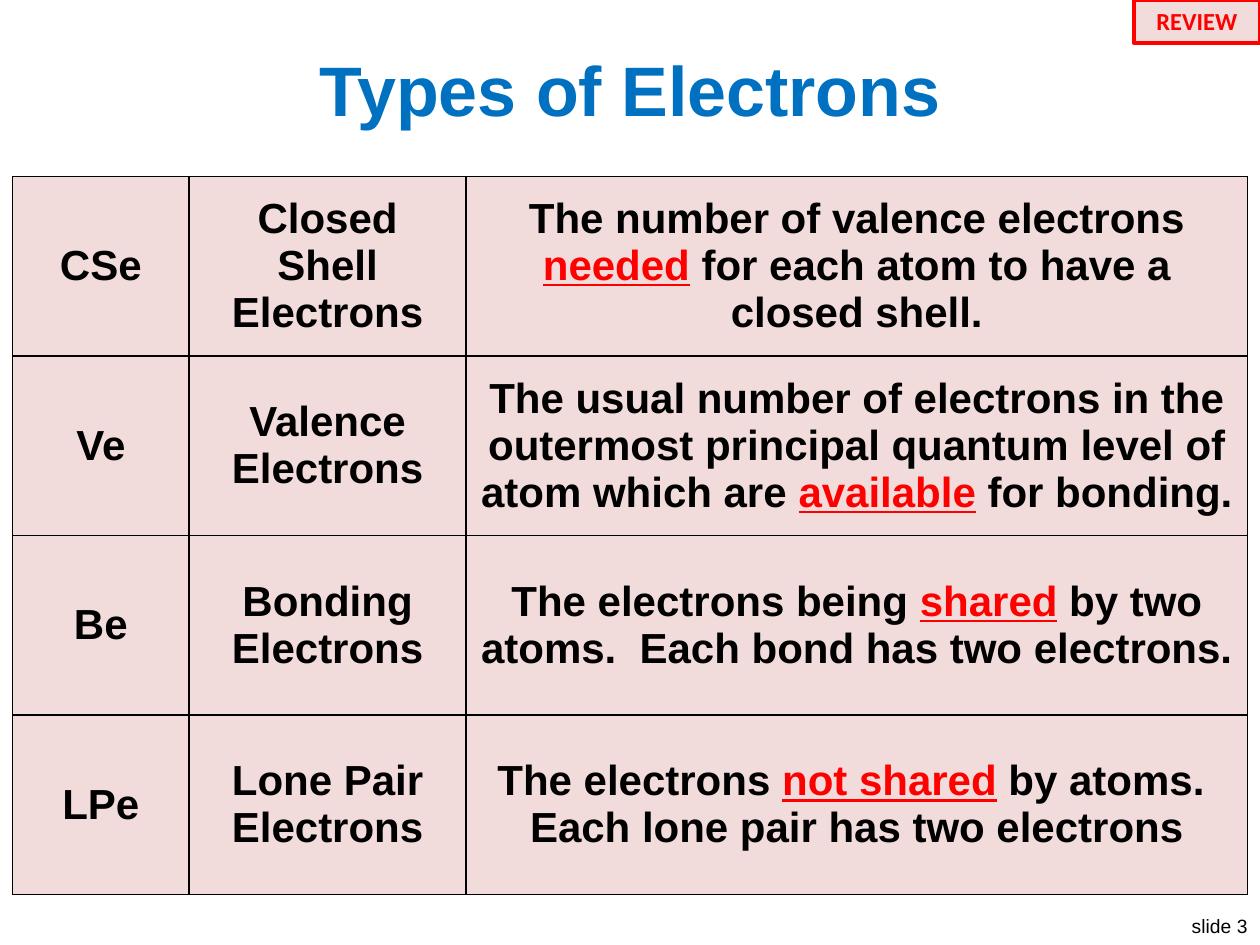
from lxml import etree
from pptx import Presentation
from pptx.dml.color import RGBColor
from pptx.enum.shapes import MSO_SHAPE
from pptx.enum.text import MSO_ANCHOR, PP_ALIGN
from pptx.oxml.ns import qn
from pptx.util import Inches, Pt

RECTANGLE = MSO_SHAPE.RECTANGLE
MIDDLE, TOP = MSO_ANCHOR.MIDDLE, MSO_ANCHOR.TOP
CENTER, RIGHT = PP_ALIGN.CENTER, PP_ALIGN.RIGHT
BLACK = RGBColor(0x00, 0x00, 0x00)
RED = RGBColor(0xFF, 0x00, 0x00)
BLUE = RGBColor(0x00, 0x70, 0xC0)
PINK = RGBColor(0xF2, 0xDC, 0xDB)

COLUMN_WIDTHS = [1.4, 2.2, 6.2]
ROW_HEIGHT = 5.7 / 4
ELECTRON_TYPES = [
    ("CSe", "Closed Shell Electrons",
     ("The number of valence electrons ", "needed",
      " for each atom to have a closed shell.")),
    ("Ve", "Valence Electrons",
     ("The usual number of electrons in the outermost principal quantum level "
      "of atom which are ", "available", " for bonding.")),
    ("Be", "Bonding Electrons",
     ("The electrons being ", "shared",
      " by two atoms.  Each bond has two electrons.")),
    ("LPe", "Lone Pair Electrons",
     ("The electrons ", "not shared",
      " by atoms.  Each lone pair has two electrons")),
]


class SlideBuilder:
    font = "Arial"

    def __init__(self, slide):
        self.slide = slide

    def add_run(self, paragraph, text, size, color=BLACK, bold=True,
                underline=False, font=None):
        run = paragraph.add_run()
        run.text = text
        run.font.name = font or self.font
        run.font.size = Pt(size)
        run.font.bold = bold
        run.font.underline = underline
        run.font.color.rgb = color

    def add_text(self, box, text, size, color=BLACK, bold=True,
                 align=CENTER, anchor=TOP, wrap=True):
        shape = self.slide.shapes.add_textbox(*map(Inches, box))
        shape.text_frame.word_wrap = wrap
        shape.text_frame.vertical_anchor = anchor
        paragraph = shape.text_frame.paragraphs[0]
        paragraph.alignment = align
        self.add_run(paragraph, text, size, color, bold)

    def add_badge(self, box, text):
        shape = self.slide.shapes.add_shape(RECTANGLE, *map(Inches, box))
        shape.shadow.inherit = False
        shape.fill.solid()
        shape.fill.fore_color.rgb = PINK
        shape.line.color.rgb = RED
        shape.line.width = Pt(2.25)
        shape.text_frame.word_wrap = True
        shape.text_frame.vertical_anchor = TOP
        paragraph = shape.text_frame.paragraphs[0]
        paragraph.alignment = CENTER
        self.add_run(paragraph, text, 14, RED, font="Calibri")

    def add_borders(self, cell):
        properties = cell._tc.get_or_add_tcPr()
        for position, side in enumerate(("a:lnL", "a:lnR", "a:lnT", "a:lnB")):
            line = etree.Element(qn(side), w=str(Pt(1)))
            fill = etree.SubElement(line, qn("a:solidFill"))
            etree.SubElement(fill, qn("a:srgbClr"), val=str(BLACK))
            properties.insert(position, line)

    def fill_cell(self, cell, parts):
        cell.fill.solid()
        cell.fill.fore_color.rgb = PINK
        cell.vertical_anchor = MIDDLE
        self.add_borders(cell)
        paragraph = cell.text_frame.paragraphs[0]
        paragraph.alignment = CENTER
        for index, text in enumerate(parts):
            keyword = index == 1
            self.add_run(paragraph, text, 24, RED if keyword else BLACK,
                         underline=keyword)

    def add_table(self, left, top, rows):
        table = self.slide.shapes.add_table(
            len(rows), len(COLUMN_WIDTHS), Inches(left), Inches(top),
            Inches(sum(COLUMN_WIDTHS)), Inches(ROW_HEIGHT * len(rows))).table
        table.first_row = False
        table.horz_banding = False
        for column, width in zip(table.columns, COLUMN_WIDTHS):
            column.width = Inches(width)
        for table_row, (symbol, name, definition) in zip(table.rows, rows):
            table_row.height = Inches(ROW_HEIGHT)
            contents = ((symbol,), (name,), definition)
            for cell, parts in zip(table_row.cells, contents):
                self.fill_cell(cell, parts)


def main():
    presentation = Presentation()
    presentation.slide_width = Inches(10)
    presentation.slide_height = Inches(7.5)
    slide = presentation.slides.add_slide(presentation.slide_layouts[6])
    builder = SlideBuilder(slide)
    builder.add_text((9.25, 7.21, 0.75, 0.29), "slide 3", 11, bold=False,
                     align=RIGHT, wrap=False)
    builder.add_text((0.2, 0.3, 9.6, 0.8), "Types of Electrons", 40, BLUE,
                     anchor=MIDDLE)
    builder.add_table(0.1, 1.4, ELECTRON_TYPES)
    builder.add_badge((9, 0, 1, 0.34), "REVIEW")
    presentation.save("out.pptx")


if __name__ == "__main__":
    main()
